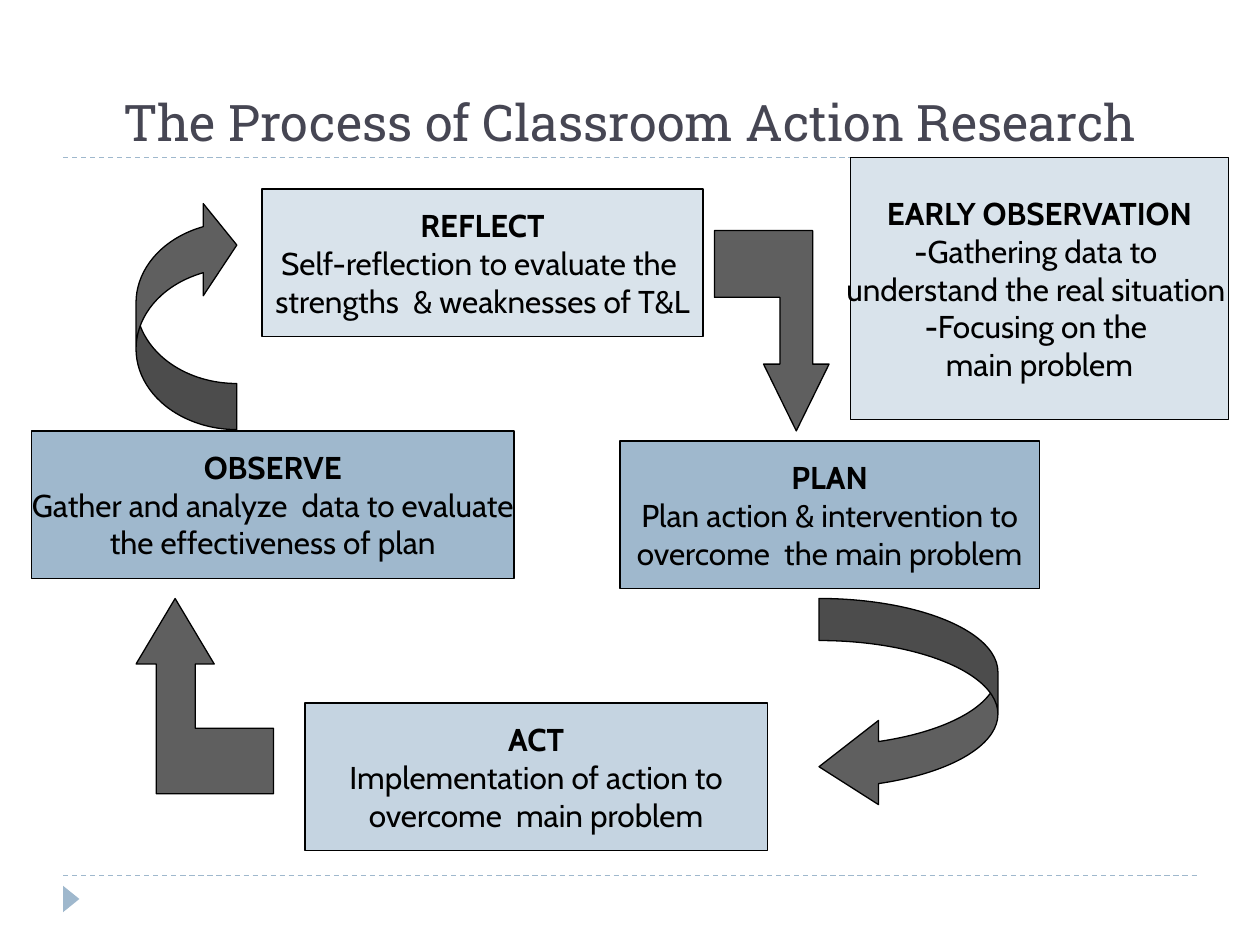
from lxml.etree import SubElement
from pptx import Presentation
from pptx.dml.color import RGBColor
from pptx.enum.dml import MSO_LINE
from pptx.enum.shapes import MSO_CONNECTOR, MSO_SHAPE
from pptx.enum.text import MSO_ANCHOR, PP_ALIGN
from pptx.oxml.ns import qn
from pptx.util import Inches, Pt

BLACK = RGBColor(0x00, 0x00, 0x00)
INK = RGBColor(0x46, 0x46, 0x53)
GREY = RGBColor(0x5F, 0x5F, 0x5F)
BLUE = RGBColor(0x9F, 0xB8, 0xCD)
SOFT = RGBColor(0xC5, 0xD4, 0xE1)
PALE = RGBColor(0xD9, 0xE3, 0xEB)


def write(para, text, font="Cabin", size=18, color=BLACK, bold=False):
    para.alignment = PP_ALIGN.CENTER
    run = para.add_run()
    run.text = text
    run.font.name = font
    run.font.size = Pt(size)
    run.font.color.rgb = color
    run.font.bold = bold


class Page:
    def __init__(self, slide, edge=BLACK, width=0.75):
        self.slide = slide
        self.shapes = slide.shapes
        self.edge = edge
        self.width = Pt(width)

    def paint(self, shape, fill, edge=True):
        shape.shadow.inherit = False
        shape.fill.solid()
        shape.fill.fore_color.rgb = fill
        if edge:
            shape.line.color.rgb = self.edge
            shape.line.width = self.width
        else:
            shape.line.fill.background()

    def title(self, text, area):
        shape = self.shapes.title
        shape.left, shape.top, shape.width, shape.height = map(Inches, area)
        frame = shape.text_frame
        frame.vertical_anchor = MSO_ANCHOR.BOTTOM
        write(frame.paragraphs[0], text, font="Roboto Slab", size=28.8, color=INK)

    def rule(self, top):
        line = self.shapes.add_connector(
            MSO_CONNECTOR.STRAIGHT, Inches(0.5), Inches(top), Inches(9.5), Inches(top))
        line.line.color.rgb = BLUE
        line.line.width = self.width
        line.line.dash_style = MSO_LINE.DASH
        SubElement(line._element.spPr, qn("a:effectLst"))

    def shape(self, kind, area, fill, adjust=(), turn=0, flip=False, edge=True):
        shape = self.shapes.add_shape(kind, *map(Inches, area))
        self.paint(shape, fill, edge)
        for spot, value in enumerate(adjust):
            shape.adjustments[spot] = value
        shape.rotation = turn
        if flip:
            shape._element.spPr.find(qn("a:xfrm")).set("flipV", "1")
        return shape

    def box(self, area, fill, head, *lines):
        frame = self.shape(MSO_SHAPE.RECTANGLE, area, fill).text_frame
        frame.word_wrap = False
        frame.vertical_anchor = MSO_ANCHOR.MIDDLE
        write(frame.paragraphs[0], head, bold=True)
        for line in lines:
            para = frame.add_paragraph()
            if line.startswith("-"):
                write(para, "-", bold=True)
            write(para, line.removeprefix("-"))

    def elbow(self, points):
        spots = [(Inches(x), Inches(y)) for x, y in points]
        pen = self.shapes.build_freeform(*spots[0])
        pen.add_line_segments(spots[1:], close=True)
        self.paint(pen.convert_to_shape(), GREY)


def main():
    deck = Presentation()
    deck.slide_width, deck.slide_height = Inches(10), Inches(7.5)
    page = Page(deck.slides.add_slide(deck.slide_layouts[5]))

    for top in (6.95, 1.25):
        page.rule(top)
    page.shape(MSO_SHAPE.ISOSCELES_TRIANGLE, (0.46, 7.07, 0.21, 0.13), BLUE,
               turn=90, edge=False)
    page.title("The Process of Classroom Action Research", (0.5, 0.25, 9, 1))

    page.box((2.08, 1.5, 3.5, 1.17), PALE, "REFLECT",
             "Self-reflection to evaluate the ", "strengths  & weaknesses of T&L")
    page.box((0.25, 3.42, 3.83, 1.17), BLUE, "OBSERVE",
             "Gather and analyze  data to evaluate", "the effectiveness of plan")
    page.box((2.42, 5.58, 3.67, 1.17), SOFT, "ACT",
             "Implementation of action to", "overcome  main problem")
    page.box((4.92, 3.5, 3.33, 1.17), BLUE, "PLAN",
             "Plan action & intervention to", "overcome  the main problem")
    page.box((6.75, 1.25, 3, 2.08), PALE, "EARLY OBSERVATION",
             "-Gathering data to ", "understand the real situation ",
             "-Focusing on the ", "main problem")

    page.elbow([(1.39, 4.75), (1.7, 5.27), (1.55, 5.27), (1.55, 5.78), (2.17, 5.78),
                (2.17, 6.3), (1.24, 6.3), (1.24, 5.27), (1.08, 5.27)])
    page.elbow([(6.32, 3.42), (6.06, 2.89), (6.19, 2.89), (6.19, 2.36), (5.67, 2.36),
                (5.67, 1.83), (6.45, 1.83), (6.45, 2.89), (6.58, 2.89)])
    page.shape(MSO_SHAPE.CURVED_LEFT_ARROW, (6.5, 4.75, 1.42, 1.67), GREY,
               adjust=(0.235, 0.471, 0.333))
    page.shape(MSO_SHAPE.CURVED_RIGHT_ARROW, (1.08, 1.58, 0.8, 1.83), GREY,
               adjust=(0.457, 0.914, 0.333), flip=True)

    deck.save("out.pptx")


if __name__ == "__main__":
    main()
